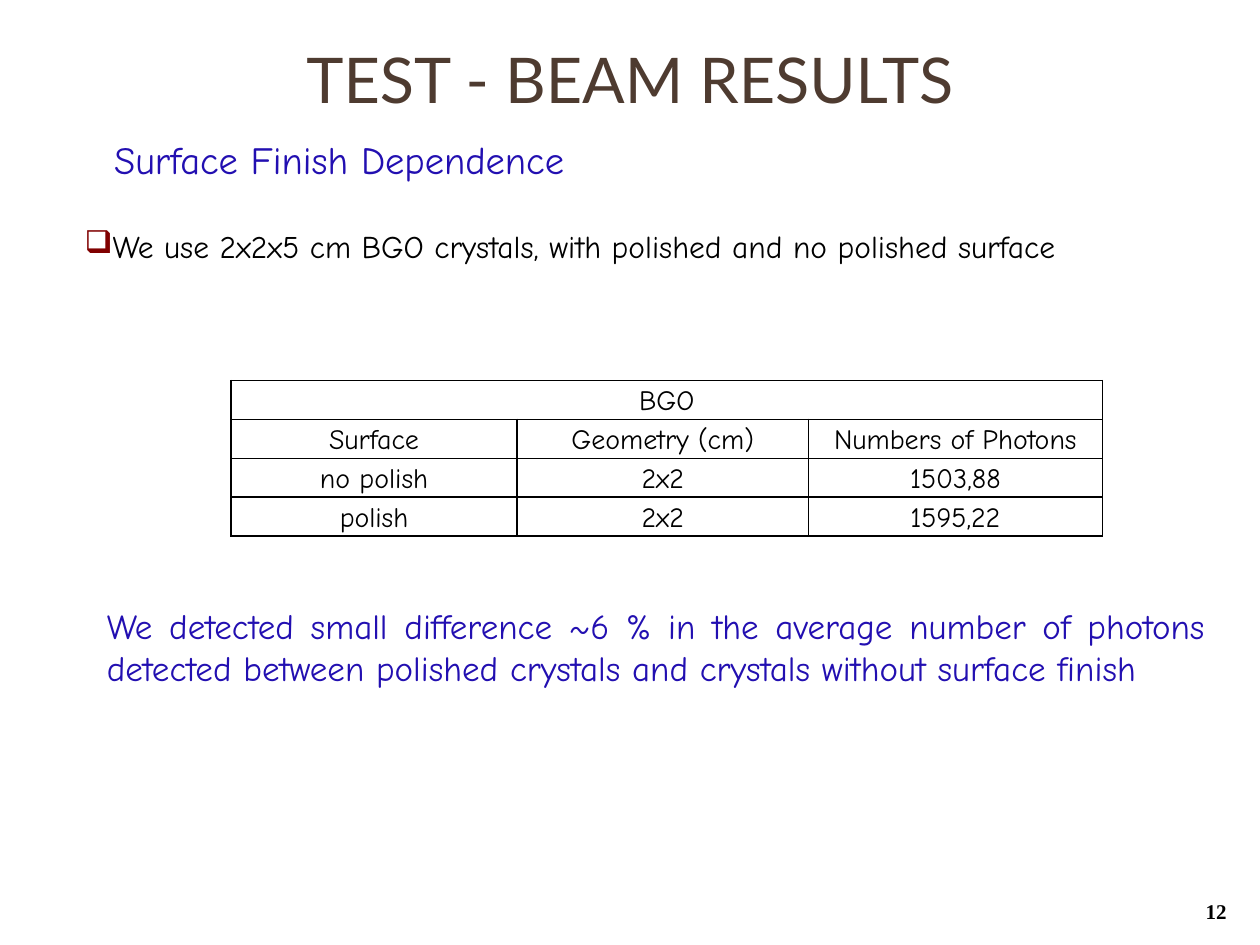
from lxml import etree
from pptx import Presentation
from pptx.dml.color import RGBColor
from pptx.enum import text
from pptx.oxml import ns
from pptx.util import Pt

BROWN = RGBColor(0x4E, 0x3B, 0x30)
BLUE = RGBColor(0x22, 0x0F, 0xB1)
BLACK = RGBColor(0, 0, 0)
BODY_FONT = "Comic Neue"
ALIGN = text.PP_ALIGN
ANCHOR = text.MSO_ANCHOR


def write(frame, words, size, color, align, font=BODY_FONT, bold=False):
    paragraph = frame.paragraphs[0]
    paragraph.alignment = align
    run = paragraph.add_run()
    run.text = words
    run.font.name, run.font.size, run.font.bold = font, Pt(size), bold
    run.font.color.rgb = color
    return paragraph


def add_text(box, words, size, color, align, anchor=ANCHOR.TOP, **style):
    frame = slide.shapes.add_textbox(*map(Pt, box)).text_frame
    frame.word_wrap = True
    frame.vertical_anchor = anchor
    return write(frame, words, size, color, align, **style)


prs = Presentation()
prs.slide_width, prs.slide_height = Pt(720), Pt(540)
slide = prs.slides.add_slide(prs.slide_layouts[5])

# Title
title = slide.shapes.title
title.left, title.top, title.width, title.height = Pt(0), Pt(0), Pt(720), Pt(90)
title.text_frame.vertical_anchor = ANCHOR.MIDDLE
write(title.text_frame, "TEST - BEAM RESULTS", 36, BROWN, ALIGN.CENTER, font="Lato")

# Page number
add_text((648, 510, 60, 19.5), "12", 12, BLACK, ALIGN.RIGHT,
         font="Times New Roman", bold=True)

# Subtitle
subtitle = add_text((0, 74, 366, 34), "Surface Finish Dependence", 22, BLUE,
                    ALIGN.CENTER, ANCHOR.MIDDLE)
subtitle._p.get_or_add_pPr().set("indent", str(Pt(21.6)))

# Results table
rows = [
    ("BGO", "", ""),
    ("Surface", "Geometry (cm)", "Numbers of Photons"),
    ("no polish", "2x2", "1503,88"),
    ("polish", "2x2", "1595,22"),
]
results = slide.shapes.add_table(len(rows), 3, Pt(132), Pt(217.5),
                                 Pt(498), Pt(88.8)).table
for column, width in zip(results.columns, (163.5, 166.5, 168)):
    column.width = Pt(width)
results.cell(0, 0).merge(results.cell(0, 2))
for r, row in enumerate(rows):
    results.rows[r].height = Pt(22.2)
    for c, words in enumerate(row):
        cell = results.cell(r, c)
        cell.margin_left = cell.margin_right = Pt(5)
        cell.margin_top = cell.margin_bottom = Pt(0)
        if words:
            line = write(cell.text_frame, words, 16, BLACK, ALIGN.CENTER)
            line.line_spacing = 1.15
        cell_pr = cell._tc.get_or_add_tcPr()
        for side in ("a:lnL", "a:lnR", "a:lnT", "a:lnB"):
            border = etree.SubElement(cell_pr, ns.qn(side), w=str(Pt(1)))
            fill = etree.SubElement(border, ns.qn("a:solidFill"))
            etree.SubElement(fill, ns.qn("a:srgbClr"), val=str(BLACK))
        cell.fill.background()

# Bulleted description
crystals = add_text((6, 126, 660, 29),
                    "We use 2x2x5 cm BGO crystals, with polished and no polished surface",
                    18, BLACK, ALIGN.JUSTIFY, ANCHOR.MIDDLE)
crystals_pr = crystals._p.get_or_add_pPr()
crystals_pr.set("marL", "0")
crystals_pr.set("indent", str(Pt(35.3)))
bullet_color = etree.SubElement(crystals_pr, ns.qn("a:buClr"))
etree.SubElement(bullet_color, ns.qn("a:srgbClr"), val="800000")
etree.SubElement(crystals_pr, ns.qn("a:buChar"), char="❑")

# Conclusion
add_text((54, 342, 642, 80),
         "We detected small difference ~6 % in the average number of photons "
         "detected between polished crystals and crystals without surface finish",
         20, BLUE, ALIGN.JUSTIFY)

prs.save("out.pptx")
